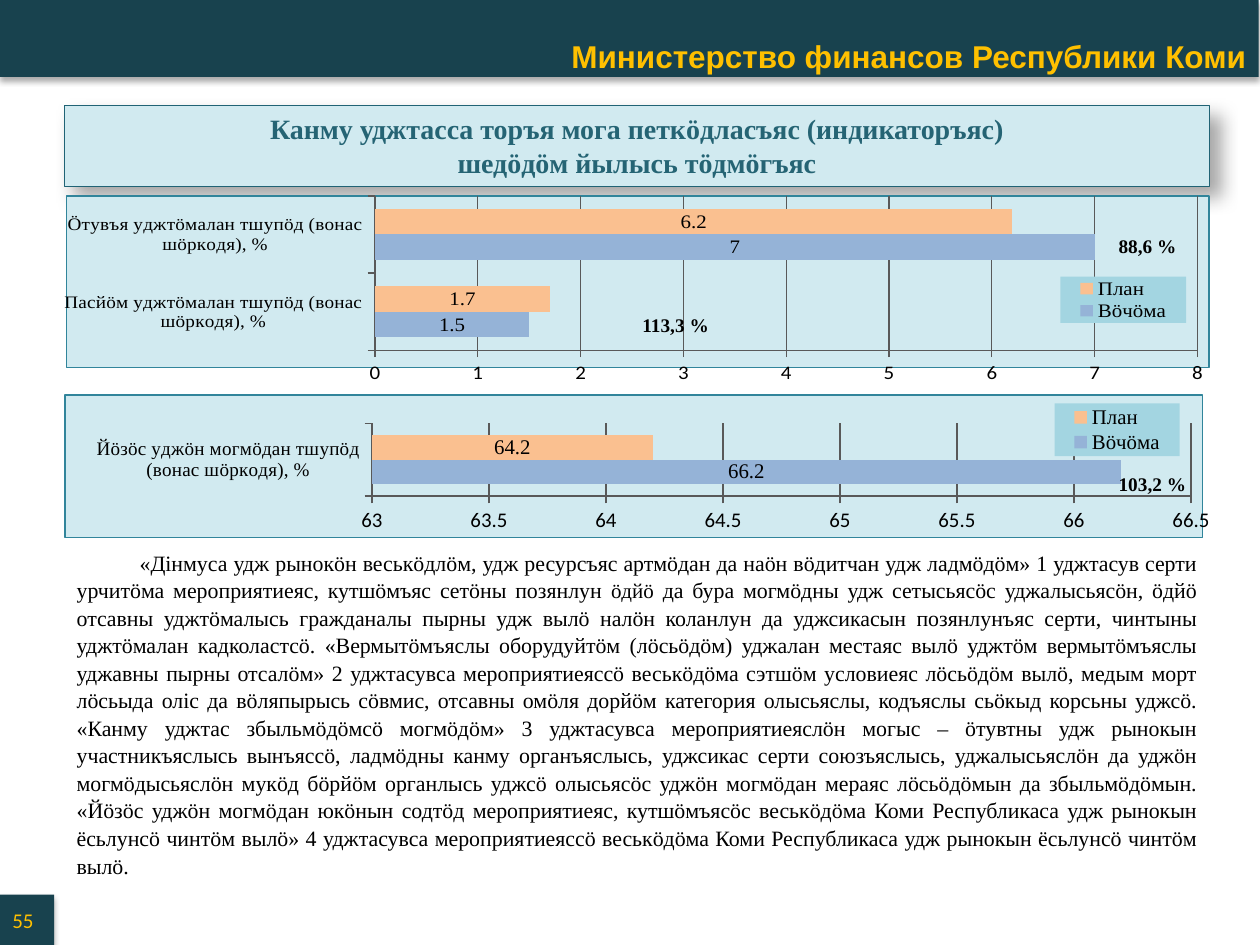
import pptx
import pptx.util
import pptx.chart.data
import pptx.dml.color
import pptx.enum.chart
import pptx.enum.shapes
import pptx.enum.text
import pptx.oxml
import pptx.oxml.ns

Inches, Pt = pptx.util.Inches, pptx.util.Pt
RGB = pptx.dml.color.RGBColor
Align = pptx.enum.text.PP_ALIGN
Anchor = pptx.enum.text.MSO_ANCHOR
qn = pptx.oxml.ns.qn

DARK = RGB(0x18, 0x42, 0x4E)
GOLD = RGB(0xFF, 0xC0, 0x00)
PALE = RGB(0xD1, 0xEA, 0xF0)
AQUA = RGB(0xA3, 0xD5, 0xE1)
EDGE = RGB(0x20, 0x63, 0x75)
TEAL = RGB(0x25, 0x64, 0x74)
RIM = RGB(0x31, 0x85, 0x9B)
GRID = RGB(0x59, 0x59, 0x59)
BLACK = RGB(0, 0, 0)
BLUE = RGB(0x95, 0xB3, 0xD7)
PEACH = RGB(0xFA, 0xC0, 0x90)

SERIF = "Times New Roman"
HEAD = {"size": Pt(18), "name": "Arial", "bold": True}
TITLE = {"size": Pt(16), "name": SERIF, "bold": True}
NOTE = {"size": Pt(11), "name": SERIF, "bold": True}
BODY = {"size": Pt(12.5), "name": SERIF}
SMALL = {"size": Pt(12), "name": SERIF}
AXIS = {"size": Pt(11), "name": SERIF}
SCALE = {"size": Pt(12), "name": "Calibri"}

LOW = (32, 3.5, 2.2, 90)
DEEP = (35, 10.2, 8, 45)

PLAN, DONE = "План", "Вӧчӧма"
START = ("«Дiнмуса удж рынокӧн веськӧдлӧм, удж ресурсъяс артмӧдан да наӧн вӧдитчан удж ладмӧдӧм» 1 уджтасув "
         "серти урчитӧма мероприятиеяс, кутшӧмъяс сетӧны позянлун ")
REST = [
    " да бура могмӧдны удж сетысьясӧс уджалысьясӧн, ӧдйӧ отсавны уджтӧмалысь гражданалы пырны удж вылӧ "
    "налӧн коланлун да уджсикасын позянлунъяс серти, чинтыны уджтӧмалан кадколастсӧ.",
    "«Вермытӧмъяслы оборудуйтӧм (лӧсьӧдӧм) уджалан местаяс вылӧ уджтӧм вермытӧмъяслы уджавны пырны "
    "отсалӧм» 2 уджтасувса мероприятиеяссӧ веськӧдӧма сэтшӧм условиеяс лӧсьӧдӧм вылӧ, медым морт лӧсьыда "
    "олiс да вӧляпырысь сӧвмис, отсавны омӧля дорйӧм категория олысьяслы, кодъяслы сьӧкыд корсьны уджсӧ.",
    "«Канму уджтас збыльмӧдӧмсӧ могмӧдӧм» 3 уджтасувса мероприятиеяслӧн могыс – ӧтувтны удж рынокын "
    "участникъяслысь вынъяссӧ, ладмӧдны канму органъяслысь, уджсикас серти союзъяслысь, уджалысьяслӧн да "
    "уджӧн могмӧдысьяслӧн мукӧд бӧрйӧм органлысь уджсӧ олысьясӧс уджӧн могмӧдан мераяс лӧсьӧдӧмын да "
    "збыльмӧдӧмын.",
    "«Йӧзӧс уджӧн могмӧдан юкӧнын содтӧд мероприятиеяс, кутшӧмъясӧс веськӧдӧма Коми Республикаса удж "
    "рынокын ёсьлунсӧ чинтӧм вылӧ» 4 уджтасувса мероприятиеяссӧ веськӧдӧма Коми Республикаса удж рынокын "
    "ёсьлунсӧ чинтӧм вылӧ.",
]


def style(font, form, color=BLACK):
    for key, val in form.items():
        setattr(font, key, val)
    font.color.rgb = color


def write(para, text, form, color=BLACK):
    run = para.add_run()
    run.text = text
    style(run.font, form, color)


def node(tag, inner=""):
    spaces = pptx.oxml.ns.nsdecls("a", "c")
    return pptx.oxml.parse_xml(f"<{tag} {spaces}>{inner}</{tag}>")


def block(slide, box, fill, shade, line=None):
    """Add a filled rectangle; shade is opacity, blur, distance and angle."""
    shape = slide.shapes.add_shape(pptx.enum.shapes.MSO_SHAPE.RECTANGLE, *map(Inches, box))
    shape.fill.solid()
    shape.fill.fore_color.rgb = fill
    if line is None:
        shape.line.fill.background()
    else:
        shape.line.color.rgb = line
        shape.line.width = Pt(0.75)
    shape.shadow.inherit = False
    dim, blur, dist, turn = shade
    glow = node("a:outerShdw", f'<a:srgbClr val="000000"><a:alpha val="{dim * 1000}"/></a:srgbClr>')
    for key, val in {"blurRad": Pt(blur), "dist": Pt(dist), "dir": turn * 60000,
                     "algn": "tl", "rotWithShape": 0}.items():
        glow.set(key, str(val))
    shape._element.spPr.find(qn("a:effectLst")).append(glow)
    shape.text_frame.word_wrap = True
    return shape.text_frame


def label(slide, box):
    frame = slide.shapes.add_textbox(*map(Inches, box)).text_frame
    frame.word_wrap = True
    return frame


def header(slide, box):
    frame = block(slide, box, DARK, LOW)
    frame.vertical_anchor = Anchor.BOTTOM
    frame.margin_bottom = Inches(0.02)
    para = frame.paragraphs[0]
    para.alignment = Align.RIGHT
    write(para, "Министерство финансов Республики Коми", HEAD, GOLD)


def title(slide, box, lines):
    frame = block(slide, box, PALE, DEEP, EDGE)
    frame.vertical_anchor = Anchor.TOP
    for i, line in enumerate(lines):
        para = frame.add_paragraph() if i else frame.paragraphs[0]
        para.alignment = Align.CENTER
        write(para, line, TITLE, TEAL)


def number(slide, box):
    frame = block(slide, box, DARK, LOW)
    frame.vertical_anchor = Anchor.MIDDLE
    frame.paragraphs[0].alignment = Align.LEFT
    write(frame.paragraphs[0], "55", SCALE, GOLD)


def paint(color):
    return f'<a:solidFill><a:srgbClr val="{color}"/></a:solidFill>'


def layout(box, inner=False):
    """Build a manual layout from shares of the chart area."""
    parts = '<c:layoutTarget val="inner"/>' if inner else ""
    parts += '<c:xMode val="edge"/><c:yMode val="edge"/>'
    parts += "".join(f'<c:{key} val="{val}"/>' for key, val in zip("xywh", box))
    return node("c:layout", f"<c:manualLayout>{parts}</c:manualLayout>")


def panel(slide, box, cats, series, scale, plot_box, key_box, notes):
    """Add a bar chart with its legend and the percent notes over it."""
    data = pptx.chart.data.CategoryChartData()
    data.categories = cats
    for name, vals, _ in series:
        data.add_series(name, vals)
    kind = pptx.enum.chart.XL_CHART_TYPE.BAR_CLUSTERED
    chart = slide.shapes.add_chart(kind, *map(Inches, box), data).chart
    chart.has_title = False
    style(chart.font, {"size": Pt(18), "name": "Calibri"})
    root = chart._chartSpace.find(qn("c:chart"))
    root.addnext(node("c:spPr", paint(PALE) + f'<a:ln w="9525">{paint(RIM)}</a:ln>'))

    plot = chart.plots[0]
    for key, val in {"gap_width": 100, "overlap": 0, "vary_by_categories": False,
                     "has_data_labels": True}.items():
        setattr(plot, key, val)
    plot.data_labels.show_value = True
    plot.data_labels.position = pptx.enum.chart.XL_LABEL_POSITION.CENTER
    style(plot.data_labels.font, SMALL)
    for item, (_, _, color) in zip(plot.series, series):
        item.format.fill.solid()
        item.format.fill.fore_color.rgb = color

    axis = chart.value_axis
    for key, val in zip(("minimum_scale", "maximum_scale", "major_unit"), scale):
        setattr(axis, key, val)
    axis.has_major_gridlines = True
    axis.major_gridlines.format.line.color.rgb = GRID
    for side, form in ((axis, SCALE), (chart.category_axis, AXIS)):
        side.format.line.color.rgb = GRID
        side.major_tick_mark = pptx.enum.chart.XL_TICK_MARK.OUTSIDE
        style(side.tick_labels.font, form)

    chart.has_legend = True
    legend = chart.legend
    legend.position = pptx.enum.chart.XL_LEGEND_POSITION.RIGHT
    legend.include_in_layout = False
    style(legend.font, SMALL)
    key = legend._element
    key.find(qn("c:overlay")).addnext(node("c:spPr", paint(AQUA)))
    area = root.find(qn("c:plotArea"))
    for part in (key, area):
        for old in part.findall(qn("c:layout")):
            part.remove(old)
    key.find(qn("c:legendPos")).addnext(layout(key_box))
    area.insert(0, layout(plot_box, True))

    for x, y, text in notes:
        frame = label(slide, (box[0] + x, box[1] + y, 0.86, 0.29))
        write(frame.paragraphs[0], text, NOTE)


def body(slide, box):
    para = label(slide, box).paragraphs[0]
    para.alignment = Align.JUSTIFY
    para.line_spacing = 1.05
    para._p.get_or_add_pPr().set("indent", str(Inches(0.5)))
    for text, form in ((START, BODY), ("ӧдйӧ", SMALL), (" ".join(REST), BODY)):
        write(para, text, form)


def main():
    deck = pptx.Presentation()
    deck.slide_width, deck.slide_height = Inches(10), Inches(7.5)
    slide = deck.slides.add_slide(deck.slide_layouts[6])
    left, wide = 0.51, 9.09
    header(slide, (0, -0.01, 9.99, 0.62))
    title(slide, (left, 0.84, wide, 0.64),
          ["Канму уджтасса торъя мога петкӧдласъяс (индикаторъяс)", "шедӧдӧм йылысь тӧдмӧгъяс"])
    number(slide, (0, 7.1, 0.43, 0.4))
    panel(slide, (left, 1.55, wide, 1.5),
          ["Пасйӧм уджтӧмалан тшупӧд (вонас шӧркодя), %", "Ӧтувъя уджтӧмалан тшупӧд (вонас шӧркодя), %"],
          [(DONE, (1.5, 7), BLUE), (PLAN, (1.7, 6.2), PEACH)], (0, 8, 1),
          (0.27, 0, 0.72, 0.9), (0.87, 0.47, 0.11, 0.27),
          [(8.27, 0.26, "88,6 %"), (4.49, 0.89, "113,3 %")])
    panel(slide, (left, 3.13, wide, 1.14), ["Йӧзӧс уджӧн могмӧдан тшупӧд (вонас шӧркодя), %"],
          [(DONE, (66.2,), BLUE), (PLAN, (64.2,), PEACH)], (63, 66.5, 0.5),
          (0.27, 0.2, 0.72, 0.51), (0.87, 0.06, 0.11, 0.37),
          [(8.27, 0.57, "103,2 %")])
    body(slide, (left, 4.3, wide, 2.75))
    deck.save("out.pptx")


if __name__ == "__main__":
    main()
